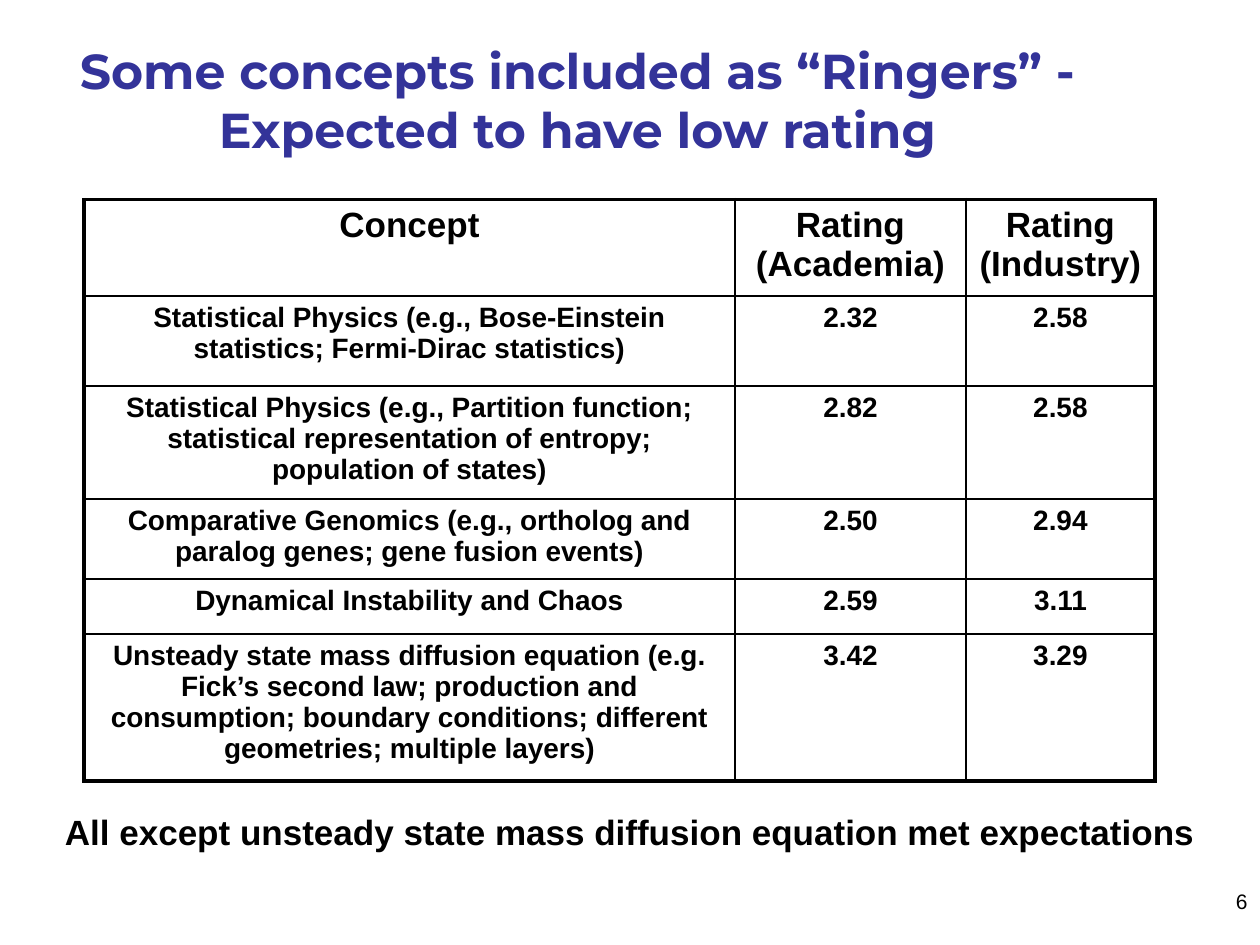
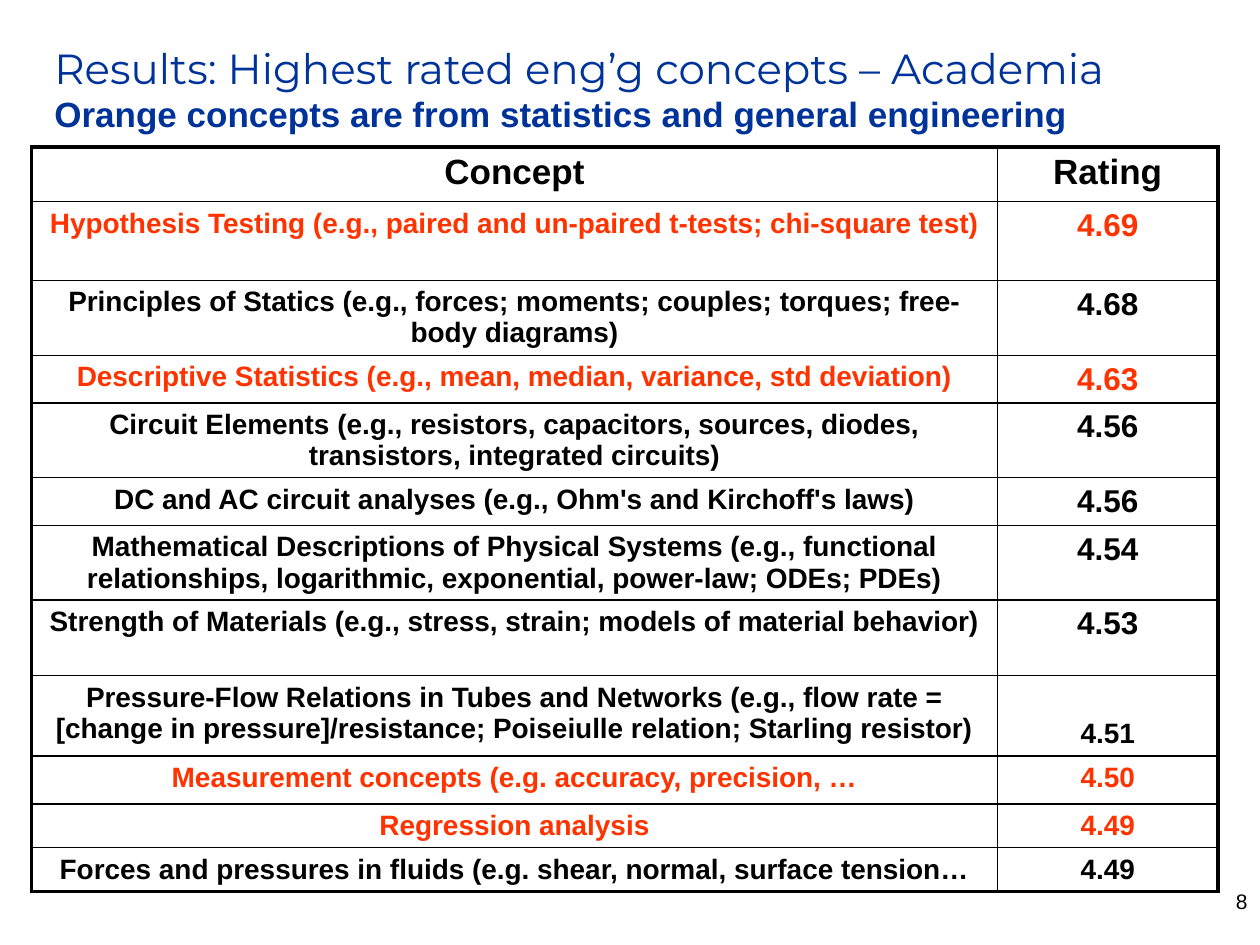
from lxml import etree
from pptx import Presentation
from pptx import util as u
from pptx.dml.color import RGBColor
from pptx.enum import text
from pptx.oxml.ns import qn

# Shared look
BLACK = RGBColor(0x00, 0x00, 0x00)
INDIGO = RGBColor(0x33, 0x33, 0x99)
NAVY = RGBColor(0x00, 0x33, 0x99)
ORANGE = RGBColor(0xFF, 0x33, 0x00)
BODY_FONT, TITLE_FONT = "Arial", "Montserrat"
OUTER_LINE, INNER_LINE = 2.25, 1
LEFT, CENTER, RIGHT = text.PP_ALIGN.LEFT, text.PP_ALIGN.CENTER, text.PP_ALIGN.RIGHT
TOP, MIDDLE, BOTTOM = (text.MSO_ANCHOR.TOP, text.MSO_ANCHOR.MIDDLE,
                       text.MSO_ANCHOR.BOTTOM)

# The slide is a grid of 120 columns by 90 rows
COLUMNS, ROWS = 120, 90
CELL_FOOT, RAISED_FOOT = 0.1, 0.6

# Concept, academia rating, industry rating, row height
RINGERS = [
    ("Statistical Physics (e.g., Bose-Einstein statistics; Fermi-Dirac statistics)",
     "2.32", "2.58", 8.55),
    ("Statistical Physics (e.g., Partition function; statistical representation "
     "of entropy; population of states)", "2.82", "2.58", 10.8),
    ("Comparative Genomics (e.g., ortholog and paralog genes; gene fusion events)",
     "2.50", "2.94", 7.6),
    ("Dynamical Instability and Chaos", "2.59", "3.11", 5.25),
    ("Unsteady state mass diffusion equation (e.g. Fick’s second law; production "
     "and consumption; boundary conditions; different geometries; multiple layers)",
     "3.42", "3.29", 14),
]

# Concept, rating, row height, colour, rating size
TOP_RATED = [
    ("Hypothesis Testing (e.g., paired and un-paired t-tests; chi-square test)",
     "4.69", 7.5, ORANGE, 18),
    ("Principles of Statics (e.g., forces; moments; couples; torques; "
     "free-body diagrams)", "4.68", 7.15, BLACK, 18),
    ("Descriptive Statistics (e.g., mean, median, variance, std deviation)",
     "4.63", 4.55, ORANGE, 18),
    ("Circuit Elements (e.g., resistors, capacitors, sources, diodes, "
     "transistors, integrated circuits)", "4.56", 7.1, BLACK, 18),
    ("DC and AC circuit analyses (e.g., Ohm's and Kirchoff's laws)",
     "4.56", 4.55, BLACK, 18),
    ("Mathematical Descriptions of Physical Systems (e.g., functional "
     "relationships, logarithmic, exponential, power-law; ODEs; PDEs)",
     "4.54", 7.1, BLACK, 18),
    ("Strength of Materials (e.g., stress, strain; models of material behavior)",
     "4.53", 7.2, BLACK, 18),
    ("Pressure-Flow Relations in Tubes and Networks (e.g., flow rate = [change in "
     "pressure]/resistance; Poiseiulle relation; Starling resistor)",
     "4.51", 7.65, BLACK, 16),
    ("Measurement concepts (e.g. accuracy, precision, …", "4.50", 4.6, ORANGE, 16),
    ("Regression analysis", "4.49", 4.15, ORANGE, 16),
    ("Forces and pressures in fluids (e.g. shear, normal, surface tension…",
     "4.49", 4.15, BLACK, 16),
]


def grid(count):
    """Length of a number of grid units; columns and rows are equally long."""
    return u.Inches(10 * count / COLUMNS)


def style(para, size, color=BLACK, bold=False, font=BODY_FONT, align=LEFT):
    para.alignment = align
    para.font.size = u.Pt(size)
    para.font.name = font
    para.font.bold = bold
    para.font.color.rgb = color


def add_text(page, place, lines, anchor=TOP):
    """Place a text box; each line is its wording and its style."""
    frame = page.shapes.add_textbox(*map(grid, place)).text_frame
    frame.word_wrap = True
    frame.vertical_anchor = anchor
    for index, (words, look) in enumerate(lines):
        para = frame.add_paragraph() if index else frame.paragraphs[0]
        para.text = words
        style(para, **look)


def add_page(deck, number):
    page = deck.slides.add_slide(deck.slide_layouts[6])
    add_text(page, (95, 84, 25, 6), [(number, dict(size=12, align=RIGHT))])
    return page


def set_borders(cell, outer_sides):
    """Draw all four cell borders, heavier on the table's outer sides."""
    properties = cell._tc.get_or_add_tcPr()
    for side in "LRTB":
        width = OUTER_LINE if side in outer_sides else INNER_LINE
        line = etree.SubElement(properties, qn(f"a:ln{side}"), w=str(u.Pt(width)))
        fill = etree.SubElement(line, qn("a:solidFill"))
        etree.SubElement(fill, qn("a:srgbClr"), val=str(BLACK))


def add_rating_table(page, left, top, widths, heights, rows):
    """Fill a ruled table; each cell is its wording, size and colour."""
    table = page.shapes.add_table(len(heights), len(widths), grid(left), grid(top),
                                  grid(sum(widths)), grid(sum(heights))).table
    table.first_row = table.horz_banding = False
    for column, width in zip(table.columns, widths):
        column.width = grid(width)
    for r, (height, row) in enumerate(zip(heights, rows)):
        table.rows[r].height = grid(height)
        for c, (words, size, color) in enumerate(row):
            cell = table.cell(r, c)
            edges = {"L": c == 0, "R": c == len(widths) - 1,
                     "T": r == 0, "B": r == len(heights) - 1}
            set_borders(cell, [side for side, is_outer in edges.items() if is_outer])
            cell.fill.background()
            # A slim foot keeps full cells from stretching their row
            cell.margin_bottom = grid(CELL_FOOT)
            cell.text = words
            style(cell.text_frame.paragraphs[0], size, color, bold=True, align=CENTER)
    return table


def header(*names):
    return [(name, 20, BLACK) for name in names]


def build_ringers(deck):
    page = add_page(deck, "6")
    add_text(page, (0, 2, 110, 15),
             [("Some concepts included as “Ringers” -\vExpected to have low rating",
               dict(size=28, color=INDIGO, bold=True, font=TITLE_FONT, align=CENTER))],
             MIDDLE)
    rows = [header("Concept", "Rating (Academia)", "Rating (Industry)")]
    rows += [[(words, 16, BLACK) for words in entry[:3]] for entry in RINGERS]
    heights = [9.2] + [entry[3] for entry in RINGERS]
    add_rating_table(page, 8, 19, (62, 22, 18), heights, rows)
    add_text(page, (5, 76.65, 112, 6),
             [("All except unsteady state mass diffusion equation met expectations",
               dict(size=20, bold=True))])


def build_top_rated(deck):
    page = add_page(deck, "8")
    rows = [header("Concept", "Rating")]
    rows += [[(concept, 16, color), (rating, size, color)]
             for concept, rating, _, color, size in TOP_RATED]
    heights = [5.2] + [entry[2] for entry in TOP_RATED]
    table = add_rating_table(page, 3, 14, (92, 21), heights, rows)
    # The pressure-flow rating sits at the foot of its cell
    pressure_rating = table.cell(8, 1)
    pressure_rating.vertical_anchor = BOTTOM
    pressure_rating.margin_bottom = grid(RAISED_FOOT)
    add_text(page, (4, 7, 113, 6.4),
             [("Results: Highest rated eng’g concepts – Academia",
               dict(size=24, color=NAVY, font=TITLE_FONT)),
              ("Orange concepts are from statistics and general engineering",
               dict(size=20, color=NAVY, bold=True))], BOTTOM)


def main():
    deck = Presentation()
    deck.slide_width, deck.slide_height = grid(COLUMNS), grid(ROWS)
    build_ringers(deck)
    build_top_rated(deck)
    deck.save("out.pptx")


if __name__ == "__main__":
    main()
